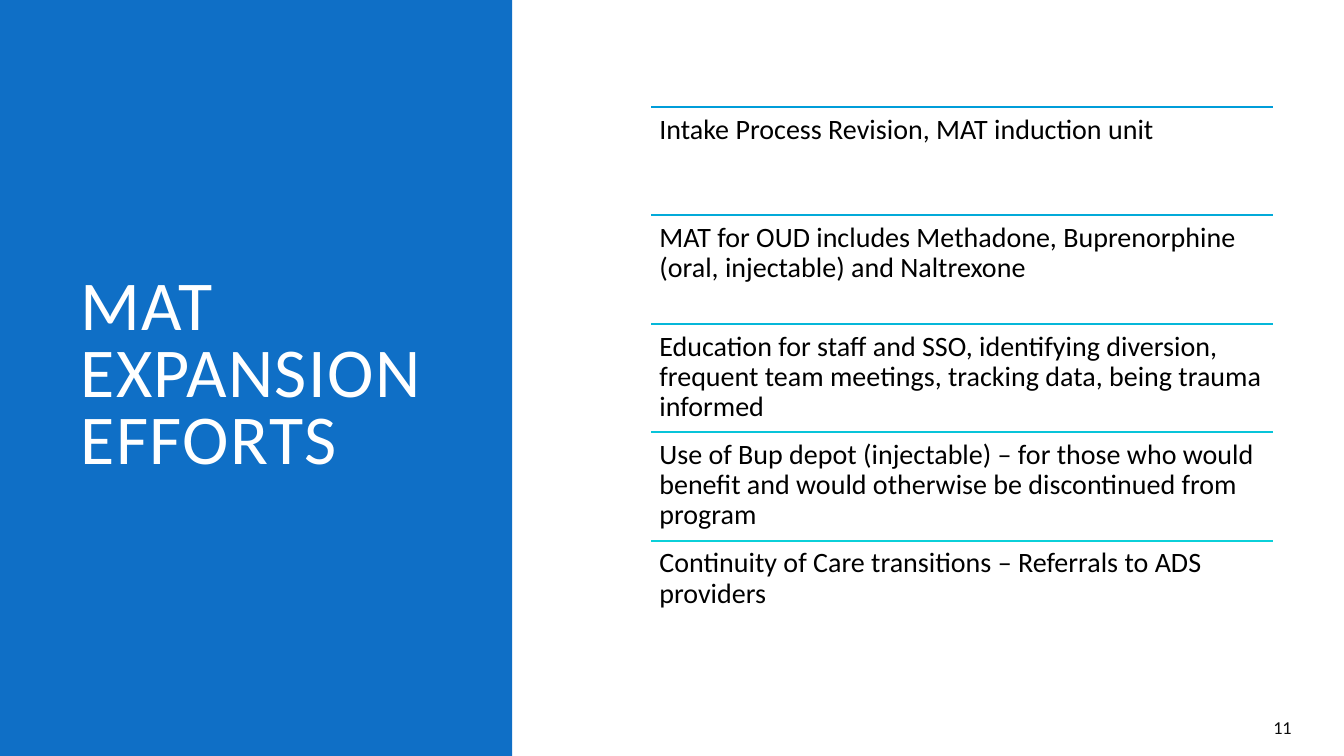
"""Build the MAT expansion efforts slide: a title panel beside a ruled list."""
from pptx import Presentation
from pptx.dml.color import RGBColor
from pptx.enum.shapes import MSO_CONNECTOR, MSO_SHAPE
from pptx.enum.text import MSO_ANCHOR, MSO_AUTO_SIZE, PP_ALIGN
from pptx.oxml.ns import qn
from pptx.util import Inches, Pt
from lxml import etree

RECT, STRAIGHT = MSO_SHAPE.RECTANGLE, MSO_CONNECTOR.STRAIGHT
TOP, MIDDLE = MSO_ANCHOR.TOP, MSO_ANCHOR.MIDDLE
LEFT, RIGHT = PP_ALIGN.LEFT, PP_ALIGN.RIGHT
NO_FIT = MSO_AUTO_SIZE.NONE

THEME = {
    "font": "Calibri",
    "panel": "0F6FC6",
    "title": {"size": 50, "color": "FFFFFF"},
    "item": {"size": 20, "color": "000000"},
    "number": {"size": 13, "color": "0D0D0D"},
    "rules": ["009DD9", "03AAD9", "05B7D9", "08C4D9", "0BD0D9"],
    "rule_width": 1.25,
}
ITEMS = [
    "Intake Process Revision, MAT induction unit",
    "MAT for OUD includes Methadone, Buprenorphine (oral, injectable) and Naltrexone",
    "Education for staff and SSO, identifying diversion, frequent team meetings, "
    "tracking data, being trauma informed",
    "Use of Bup depot (injectable) – for those who would benefit and would "
    "otherwise be discontinued from program",
    "Continuity of Care transitions – Referrals to ADS providers",
]
WIDTH, HEIGHT = Inches(13.33), Inches(7.5)
PANEL_WIDTH = Inches(5.08)
LIST_LEFT, LIST_TOP, LIST_WIDTH = Inches(6.46), Inches(1.06), Inches(6.17)
ROW = Inches(5.38) // len(ITEMS)


def write(sp, text, style, frame, para):
    """Put one styled paragraph in a shape and return its run."""
    tf = sp.text_frame
    p = tf.paragraphs[0]
    r = p.add_run()
    r.text = text
    font = {"name": THEME["font"], "size": Pt(style["size"])}
    frame = {"word_wrap": True, "auto_size": NO_FIT, **frame}
    for target, values in ((tf, frame), (p, para), (r.font, font)):
        for name, value in values.items():
            setattr(target, name, value)
    r.font.color.rgb = RGBColor.from_string(style["color"])
    return r


prs = Presentation()
prs.slide_width, prs.slide_height = WIDTH, HEIGHT
s = prs.slides.add_slide(prs.slide_layouts[5])

panel = s.shapes.add_shape(RECT, 0, 0, PANEL_WIDTH, HEIGHT)
panel.shadow.inherit = False
panel.fill.solid()
panel.fill.fore_color.rgb = RGBColor.from_string(THEME["panel"])
panel.line.fill.background()

title = s.shapes.title
panel._element.addnext(title._element)
title.left, title.top = Inches(0.7), Inches(0.7)
title.width, title.height = Inches(3.74), Inches(6.09)
r = write(title, "MAT EXPANSION EFFORTS", THEME["title"],
          {"vertical_anchor": MIDDLE}, {"alignment": LEFT, "line_spacing": 0.8})
r.font._element.set("spc", "100")

number = s.shapes.add_textbox(Inches(11.85), Inches(7.08), Inches(1.06), Inches(0.3))
write(number, "11", THEME["number"], {"vertical_anchor": MIDDLE},
      {"alignment": RIGHT, "line_spacing": 0.9, "space_after": Pt(6)})

margins = dict.fromkeys(
    ("margin_left", "margin_top", "margin_right", "margin_bottom"), Inches(0.08))
for i, (item, color) in enumerate(zip(ITEMS, THEME["rules"])):
    top = LIST_TOP + i * ROW
    rule = s.shapes.add_connector(STRAIGHT, LIST_LEFT, top, LIST_LEFT + LIST_WIDTH, top)
    rule.line.color.rgb = RGBColor.from_string(color)
    rule.line.width = Pt(THEME["rule_width"])
    etree.SubElement(rule._element.spPr, qn("a:effectLst"))
    sp = s.shapes.add_textbox(LIST_LEFT, top, LIST_WIDTH, ROW)
    write(sp, item, THEME["item"], {"vertical_anchor": TOP, **margins},
          {"alignment": LEFT, "line_spacing": 0.9, "space_after": Pt(7)})

prs.save("out.pptx")
